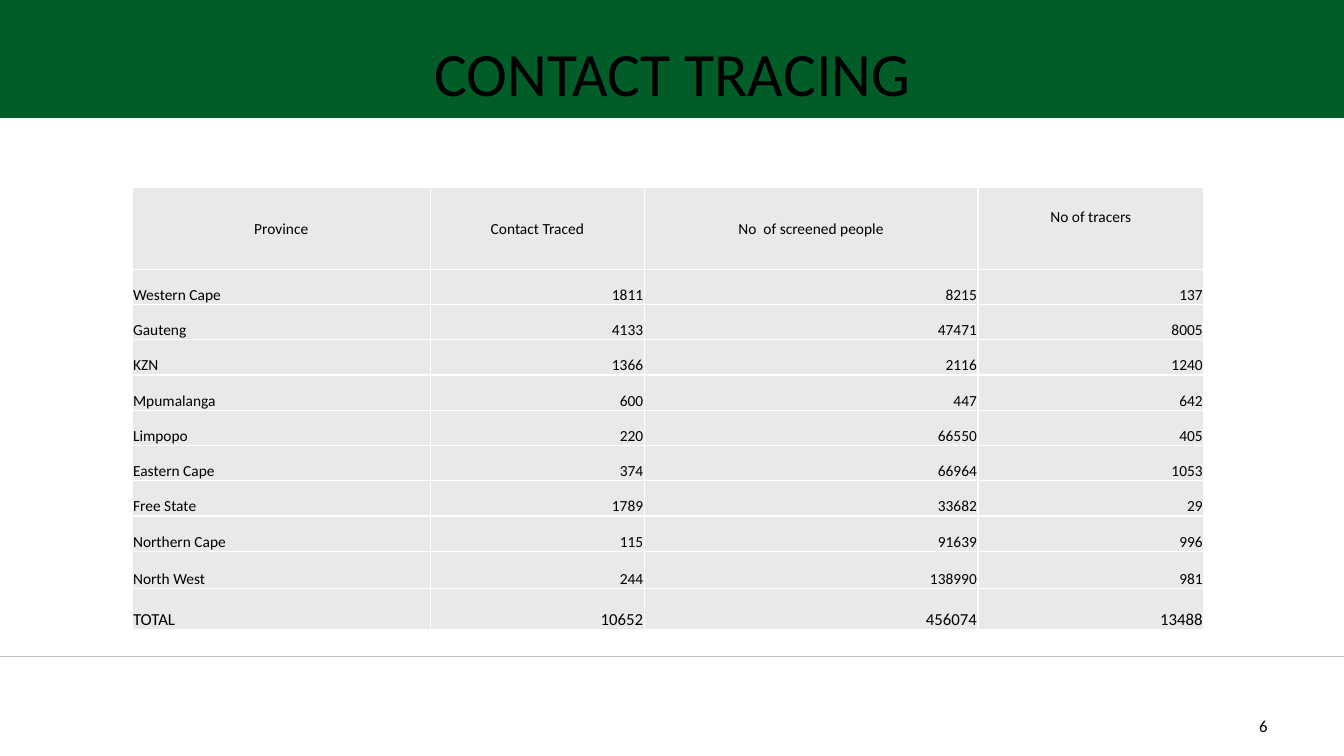
"""Build the contact tracing slide with its table of provinces."""
from lxml import etree
from pptx import Presentation
from pptx.dml.color import RGBColor
from pptx.enum.shapes import MSO_CONNECTOR, MSO_SHAPE
from pptx.enum.text import MSO_ANCHOR, PP_ALIGN
from pptx.oxml.ns import qn
from pptx.util import Inches, Pt

LEFT, CENTER, RIGHT = PP_ALIGN.LEFT, PP_ALIGN.CENTER, PP_ALIGN.RIGHT
TOP, MIDDLE, BOTTOM = MSO_ANCHOR.TOP, MSO_ANCHOR.MIDDLE, MSO_ANCHOR.BOTTOM
RECTANGLE, STRAIGHT = MSO_SHAPE.RECTANGLE, MSO_CONNECTOR.STRAIGHT

TITLE = "CONTACT TRACING"
PAGE_NUMBER = "6"
HEADINGS = ("Province", "Contact Traced", "No  of screened people", "No of tracers")
PROVINCES = [
    ("Western Cape", 1811, 8215, 137),
    ("Gauteng", 4133, 47471, 8005),
    ("KZN", 1366, 2116, 1240),
    ("Mpumalanga", 600, 447, 642),
    ("Limpopo", 220, 66550, 405),
    ("Eastern Cape", 374, 66964, 1053),
    ("Free State", 1789, 33682, 29),
    ("Northern Cape", 115, 91639, 996),
    ("North West", 244, 138990, 981),
]
TOTAL = ("TOTAL", 10652, 456074, 13488)

COLORS = {"band": "005D28", "rule": "BFBFBF", "cell": "E7EAE8",
          "border": "FFFFFF", "text": "000000"}
FONT = "Calibri"
SLIDE_WIDTH, SLIDE_HEIGHT = 13.33, 7.5
BAND_HEIGHT, RULE_TOP = 1.17, 6.51
TITLE_BOX = (0.67, 0.3, 12, 1.25)
TABLE_BOX = (1.31, 1.86, 10.63, 4.41)
PAGE_BOX = (9.56, 6.95, 3.11, 0.4)
COLUMN_WIDTHS = (2.96, 2.12, 3.31, 2.24)
ROW_HEIGHTS = (0.81,) + (0.35,) * 8 + (0.37, 0.41)
CELL_MARGINS = {"margin_left": 0.01, "margin_right": 0.01,
                "margin_top": 0.01, "margin_bottom": 0}
TRACERS_HEADING_MARGIN = 0.2


def color(name):
    return RGBColor.from_string(COLORS[name])


def inches(box):
    return [Inches(value) for value in box]


def write(frame, text, size, align):
    frame.text = text
    paragraph = frame.paragraphs[0]
    paragraph.alignment = align
    font = paragraph.runs[0].font
    for name, value in {"name": FONT, "size": Pt(size)}.items():
        setattr(font, name, value)
    font.color.rgb = color("text")


def add_borders(cell):
    properties = cell._tc.get_or_add_tcPr()
    for position, side in enumerate(("lnL", "lnR", "lnT", "lnB")):
        border = etree.Element(qn(f"a:{side}"), w=str(Pt(1)))
        fill = etree.SubElement(border, qn("a:solidFill"))
        etree.SubElement(fill, qn("a:srgbClr"), val=COLORS["border"])
        properties.insert(position, border)


def add_backdrop(slide):
    band = slide.shapes.add_shape(
        RECTANGLE, *inches((0, 0, SLIDE_WIDTH, BAND_HEIGHT)))
    band.shadow.inherit = False
    band.fill.solid()
    band.fill.fore_color.rgb = color("band")
    band.line.fill.background()
    rule = slide.shapes.add_connector(
        STRAIGHT, *inches((0, RULE_TOP, SLIDE_WIDTH, RULE_TOP)))
    rule.line.color.rgb = color("rule")
    rule.line.width = Pt(0.75)
    etree.SubElement(rule._element.spPr, qn("a:effectLst"))
    for position, part in enumerate((band, rule), start=2):
        slide.shapes._spTree.insert(position, part._element)


def add_title(slide):
    title = slide.shapes.title
    title.left, title.top, title.width, title.height = inches(TITLE_BOX)
    title.text_frame.vertical_anchor = TOP
    write(title.text_frame, TITLE, 44, CENTER)


def add_province_table(slide):
    rows = [HEADINGS, *PROVINCES, TOTAL]
    table = slide.shapes.add_table(
        len(rows), len(HEADINGS), *inches(TABLE_BOX)).table
    table.horz_banding = False
    for column, width in zip(table.columns, COLUMN_WIDTHS):
        column.width = Inches(width)
    for row, height in zip(table.rows, ROW_HEIGHTS):
        row.height = Inches(height)
    table.first_row = False
    for row_index, values in enumerate(rows):
        is_heading = values is HEADINGS
        for column_index, value in enumerate(values):
            cell = table.cell(row_index, column_index)
            for name, margin in CELL_MARGINS.items():
                setattr(cell, name, Inches(margin))
            cell.vertical_anchor = MIDDLE if is_heading else BOTTOM
            cell.fill.solid()
            cell.fill.fore_color.rgb = color("cell")
            add_borders(cell)
            align = CENTER if is_heading else RIGHT if column_index else LEFT
            write(cell.text_frame, str(value), 12 if values is TOTAL else 11, align)
    tracers_heading = table.cell(0, len(HEADINGS) - 1)
    tracers_heading.vertical_anchor = TOP
    tracers_heading.margin_top = Inches(TRACERS_HEADING_MARGIN)


def add_page_number(slide):
    frame = slide.shapes.add_textbox(*inches(PAGE_BOX)).text_frame
    frame.word_wrap = True
    frame.vertical_anchor = BOTTOM
    write(frame, PAGE_NUMBER, 12, RIGHT)


def main():
    deck = Presentation()
    deck.slide_width, deck.slide_height = inches((SLIDE_WIDTH, SLIDE_HEIGHT))
    slide = deck.slides.add_slide(deck.slide_layouts[5])
    add_backdrop(slide)
    add_title(slide)
    add_province_table(slide)
    add_page_number(slide)
    deck.save("out.pptx")


if __name__ == "__main__":
    main()
